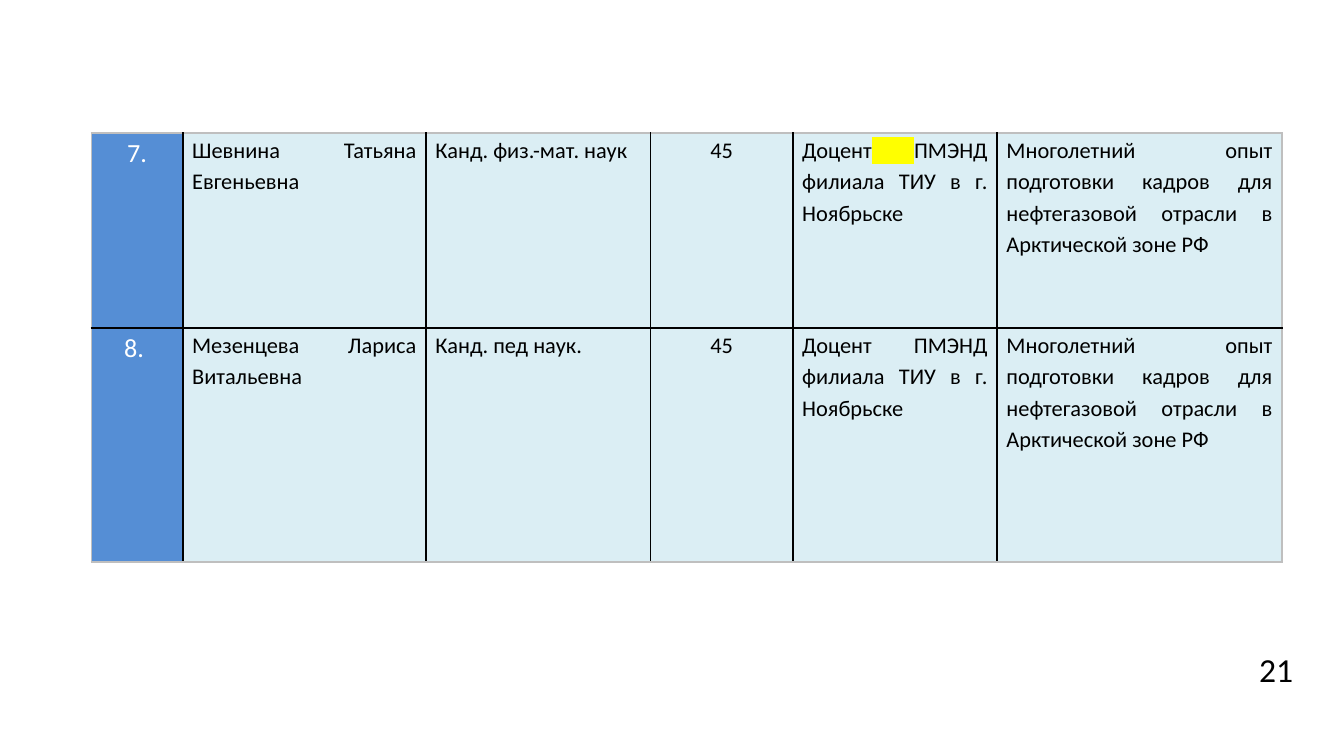
from dataclasses import dataclass

from lxml.etree import SubElement
from pptx import Presentation
from pptx.dml.color import RGBColor
from pptx.enum.text import MSO_AUTO_SIZE, PP_ALIGN
from pptx.oxml.ns import qn
from pptx.util import Inches, Pt


@dataclass(frozen=True)
class Theme:
    font: str = "Calibri"
    number_size: int = 14
    body_size: int = 12
    page_size: int = 18
    text: str = "000000"
    number_text: str = "FFFFFF"
    number_fill: str = "558ED5"
    body_fill: str = "DBEEF4"
    highlight: str = "FFFF00"
    inner_line: str = "000000"
    outer_line: str = "BFBFBF"
    line_width: float = 1
    line_spacing: float = 1.15


@dataclass(frozen=True)
class TextRun:
    text: str
    highlighted: bool = False


@dataclass(frozen=True)
class Teacher:
    number: str
    name: str
    degree: str
    share: str
    position: tuple[TextRun, ...]
    experience: str

    def cells(self) -> list[tuple[TextRun, ...]]:
        before = [(TextRun(text),) for text in
                  (self.number, self.name, self.degree, self.share)]
        return [*before, self.position, (TextRun(self.experience),)]


THEME = Theme()
# Widescreen, 16 to 9
SLIDE_WIDTH = 10
SLIDE_HEIGHT = SLIDE_WIDTH * 9 / 16
TABLE_LEFT, TABLE_TOP = 0.68, 0.99
COLUMN_WIDTHS = (0.68, 1.81, 1.67, 1.06, 1.52, 2.12)
ROW_HEIGHTS = (1.45, 1.74)
CENTRED_COLUMNS = (0, 3)
CELL_MARGIN = 0.07

EXPERIENCE = ("Многолетний опыт подготовки кадров для нефтегазовой отрасли "
              "в Арктической зоне РФ")
DEPARTMENT = "ПМЭНД филиала ТИУ в г. Ноябрьске"
TEACHERS = (
    Teacher("7.", "Шевнина Татьяна Евгеньевна", "Канд. физ.-мат. наук", "45",
            (TextRun("Доцент"), TextRun(" ", True), TextRun(DEPARTMENT)), EXPERIENCE),
    Teacher("8. ", "Мезенцева Лариса Витальевна", "Канд. пед наук.", "45",
            (TextRun(f"Доцент {DEPARTMENT}"),), EXPERIENCE),
)


def add_run(paragraph, content: TextRun, size: int, color: str) -> None:
    run = paragraph.add_run()
    run.text = content.text
    run.font.size = Pt(size)
    run.font.color.rgb = RGBColor.from_string(color)
    if content.highlighted:
        properties = run.font._element
        highlight = SubElement(properties, qn("a:highlight"))
        SubElement(highlight, qn("a:srgbClr"), val=THEME.highlight)
    run.font.name = THEME.font


def set_borders(cell, row: int, column: int) -> None:
    """Grey on the outer edge of the table, black between cells."""
    outer_edges = {
        "a:lnL": column == 0,
        "a:lnR": column == len(COLUMN_WIDTHS) - 1,
        "a:lnT": row == 0,
        "a:lnB": row == len(ROW_HEIGHTS) - 1,
    }
    properties = cell._tc.get_or_add_tcPr()
    for tag, is_outer in outer_edges.items():
        line = SubElement(properties, qn(tag), w=str(Pt(THEME.line_width)))
        fill = SubElement(line, qn("a:solidFill"))
        color = THEME.outer_line if is_outer else THEME.inner_line
        SubElement(fill, qn("a:srgbClr"), val=color)


def fill_cell(cell, runs: tuple[TextRun, ...], row: int, column: int) -> None:
    is_number = column == 0
    cell.margin_left = cell.margin_right = Inches(CELL_MARGIN)
    cell.margin_top = cell.margin_bottom = 0
    set_borders(cell, row, column)
    cell.fill.solid()
    cell.fill.fore_color.rgb = RGBColor.from_string(
        THEME.number_fill if is_number else THEME.body_fill)

    paragraph = cell.text_frame.paragraphs[0]
    paragraph.alignment = (PP_ALIGN.CENTER if column in CENTRED_COLUMNS
                           else PP_ALIGN.JUSTIFY)
    paragraph.line_spacing = THEME.line_spacing
    size = THEME.number_size if is_number else THEME.body_size
    color = THEME.number_text if is_number else THEME.text
    for content in runs:
        add_run(paragraph, content, size, color)


def add_teacher_table(slide) -> None:
    table = slide.shapes.add_table(
        len(ROW_HEIGHTS), len(COLUMN_WIDTHS), Inches(TABLE_LEFT), Inches(TABLE_TOP),
        Inches(sum(COLUMN_WIDTHS)), Inches(sum(ROW_HEIGHTS))).table
    table.first_row = table.horz_banding = False
    for column, width in zip(table.columns, COLUMN_WIDTHS):
        column.width = Inches(width)
    for row, height in zip(table.rows, ROW_HEIGHTS):
        row.height = Inches(height)
    for row, teacher in enumerate(TEACHERS):
        for column, runs in enumerate(teacher.cells()):
            fill_cell(table.cell(row, column), runs, row, column)


def add_page_number(slide, number: str) -> None:
    box = slide.shapes.add_textbox(Inches(9.27), Inches(4.78), Inches(0.46), Inches(0.4))
    frame = box.text_frame
    frame.word_wrap = False
    frame.auto_size = MSO_AUTO_SIZE.SHAPE_TO_FIT_TEXT
    add_run(frame.paragraphs[0], TextRun(number), THEME.page_size, THEME.text)


def main() -> None:
    presentation = Presentation()
    presentation.slide_width = Inches(SLIDE_WIDTH)
    presentation.slide_height = Inches(SLIDE_HEIGHT)
    # The slide has no title, so it takes the blank layout
    slide = presentation.slides.add_slide(presentation.slide_layouts[6])
    add_teacher_table(slide)
    add_page_number(slide, "21")
    presentation.save("out.pptx")


if __name__ == "__main__":
    main()
